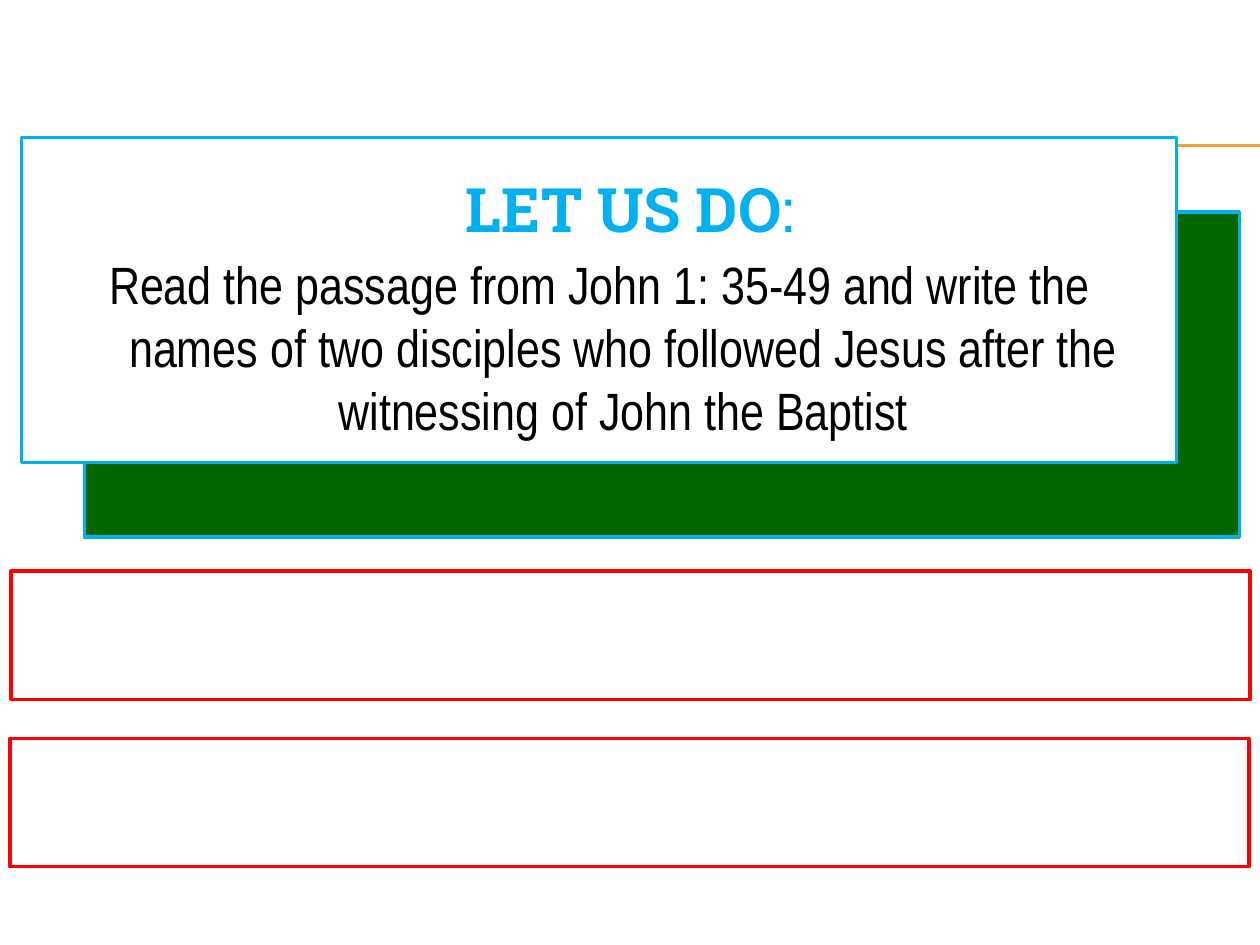
from dataclasses import dataclass

from lxml import etree
from pptx import Presentation
from pptx import util as u
from pptx.dml.color import RGBColor
from pptx.enum import shapes, text
from pptx.oxml.ns import qn

Pt = u.Pt


@dataclass(frozen=True)
class Theme:
    blue: str = "00B0F0"
    green: str = "006600"
    red: str = "FF0000"
    gold: str = "F0A22E"
    white: str = "FFFFFF"
    black: str = "000000"
    title_font: str = "Roboto Slab"
    body_font: str = "Arial Narrow"
    title_size: float = 35
    body_size: float = 30
    border: float = 2
    rule: float = 0.75


class SlideBuilder:
    def __init__(self, slide, theme):
        self.s = slide
        self.theme = theme

    def rule(self, x1, x2, y, color):
        sp = self.s.shapes.add_connector(
            shapes.MSO_CONNECTOR.STRAIGHT, Pt(x1), Pt(y), Pt(x2), Pt(y))
        sp.line.color.rgb = RGBColor.from_string(color)
        sp.line.width = Pt(self.theme.rule)
        etree.SubElement(sp._element.spPr, qn("a:effectLst"))

    def box(self, x, y, w, h, fill, line):
        sp = self.s.shapes.add_shape(
            shapes.MSO_SHAPE.RECTANGLE, Pt(x), Pt(y), Pt(w), Pt(h))
        sp.shadow.inherit = False
        sp.fill.solid()
        sp.fill.fore_color.rgb = RGBColor.from_string(fill)
        sp.line.color.rgb = RGBColor.from_string(line)
        sp.line.width = Pt(self.theme.border)

    def text(self, x, y, w, h, runs, font, size, color,
             anchor=text.MSO_ANCHOR.TOP, before=0, hanging=0):
        """Add one centred paragraph; runs are (wording, bold) pairs."""
        tf = self.s.shapes.add_textbox(Pt(x), Pt(y), Pt(w), Pt(h)).text_frame
        tf.word_wrap = True
        tf.vertical_anchor = anchor
        p = tf.paragraphs[0]
        p.alignment = text.PP_ALIGN.CENTER
        p.space_before = Pt(before)
        p.font.name = font
        p.font.size = Pt(size)
        p.font.color.rgb = RGBColor.from_string(color)
        for wording, bold in runs:
            r = p.add_run()
            r.text = wording
            r.font.bold = bold
        if hanging:
            pPr = p._p.get_or_add_pPr()
            pPr.set("marL", str(Pt(hanging)))
            pPr.set("indent", str(-Pt(hanging)))


def main():
    theme = Theme()
    prs = Presentation()
    prs.slide_width, prs.slide_height = Pt(720), Pt(540)
    b = SlideBuilder(prs.slides.add_slide(prs.slide_layouts[6]), theme)

    # Double rule behind the card
    for y in (82.8, 83.5):
        b.rule(40.3, 720, y, theme.gold)

    # Green backing and white card
    for x, y, fill in ((48.2, 121, theme.green), (12.2, 78.5, theme.white)):
        b.box(x, y, 660, 185.8, fill, theme.blue)

    # Title and task
    b.text(0, 85.7, 720, 66.2, [("LET US DO", True), (":", False)],
           theme.title_font, theme.title_size, theme.blue,
           anchor=text.MSO_ANCHOR.MIDDLE)
    task = ("Read the passage from John 1: 35-49 and write the names of two "
            "disciples who followed Jesus after the witnessing of John the Baptist")
    b.text(39.6, 140.4, 606.2, 72, [(task, False)],
           theme.body_font, theme.body_size, theme.black, before=6, hanging=27)

    # Answer boxes
    for x, y in ((6.4, 326.3), (5.8, 421.9)):
        b.box(x, y, 708, 73.4, theme.white, theme.red)

    prs.save("out.pptx")


if __name__ == "__main__":
    main()
